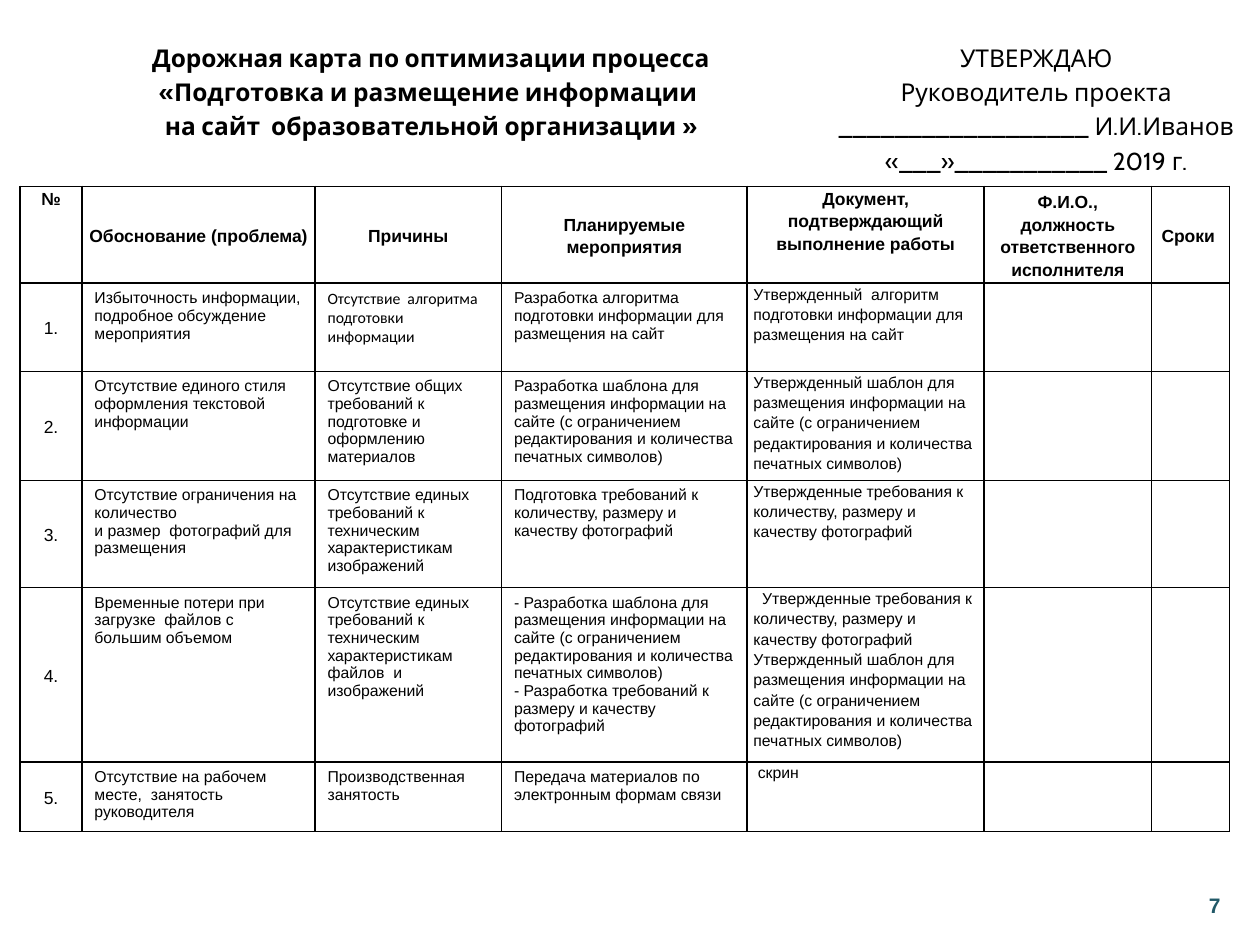
"""Build the road map slide with its approval block and task table."""
from dataclasses import dataclass

from lxml.etree import SubElement
from pptx import Presentation
from pptx.dml.color import RGBColor
from pptx.enum.text import MSO_ANCHOR, PP_ALIGN
from pptx.oxml.ns import qn
from pptx.util import Inches, Pt


@dataclass(frozen=True)
class Theme:
    """Colours, fonts and type sizes."""
    ink: str = "000000"
    page: str = "215968"
    title: str = "Cabin"
    body: str = "Arial"
    alt: str = "Calibri"
    large: int = 14
    mid: int = 12
    head: int = 10
    small: int = 9
    line: int = 1
    plain: str = "{2D5ABB26-0587-4C30-8999-92F81FD0307C}"


THEME = Theme()

TITLE = ["Дорожная карта по оптимизации процесса",
         "«Подготовка и размещение информации \nна сайт  образовательной организации »"]
SIGN = ["УТВЕРЖДАЮ", "Руководитель проекта",
        "__________________ И.И.Иванов", "«___»___________ 2019 г."]
HEADS = ["№", "Обоснование (проблема)", "Причины", "Планируемые мероприятия",
         "Документ, подтверждающий выполнение работы",
         "Ф.И.О., должность ответственного исполнителя", "Сроки "]
LIMIT = ("для размещения информации на сайте (с ограничением "
         "редактирования и количества печатных символов)")
PHOTO = "количеству, размеру и качеству фотографий"
TECH = "Отсутствие единых требований к техническим характеристикам "
TASKS = [
    ("Избыточность информации, подробное обсуждение мероприятия",
     "Отсутствие  алгоритма подготовки информации",
     ["Разработка алгоритма подготовки информации для размещения на сайт"],
     ["Утвержденный  алгоритм подготовки информации для размещения на сайт"]),
    ("Отсутствие единого стиля оформления текстовой информации",
     "Отсутствие общих требований к подготовке и оформлению материалов",
     ["Разработка шаблона " + LIMIT], ["Утвержденный шаблон " + LIMIT]),
    ("Отсутствие ограничения на  количество \nи размер  фотографий для размещения",
     TECH + "изображений",
     ["Подготовка требований к " + PHOTO], ["Утвержденные требования к " + PHOTO]),
    ("Временные потери при загрузке  файлов с большим объемом",
     TECH + "файлов  и изображений",
     ["- Разработка шаблона " + LIMIT,
      "- Разработка требований к размеру и качеству фотографий"],
     ["  Утвержденные требования к " + PHOTO, "Утвержденный шаблон " + LIMIT]),
    ("Отсутствие на рабочем месте,  занятость руководителя",
     "Производственная занятость",
     ["Передача материалов по электронным формам связи"], [" скрин"]),
]
COLS = [0.49, 1.85, 1.48, 1.95, 1.88, 1.33, 0.62]
ROWS = [0.71, 0.7, 0.8, 0.8, 1.29, 0.52]


def write(frame, lines, size=THEME.small, font=THEME.body, color=THEME.ink,
          bold=False, align=PP_ALIGN.LEFT, space=None):
    """Fill a text frame with formatted paragraphs."""
    for i, line in enumerate(lines):
        para = frame.add_paragraph() if i else frame.paragraphs[0]
        para.text = line
        para.alignment = align
        if space:
            para.line_spacing = space
        for run in para.runs:
            run.font.size, run.font.name, run.font.bold = Pt(size), font, bold
            run.font.color.rgb = RGBColor.from_string(color)
        for gap in para._p.findall(qn("a:br")):
            SubElement(gap, qn("a:rPr"), sz=str(size * 100))


def pad(cell, side):
    """Give a cell narrow side margins and none above or below."""
    cell.margin_left = cell.margin_right = Inches(side)
    cell.margin_top = cell.margin_bottom = 0


def edge(cell):
    """Draw a solid border on all four sides of a cell."""
    props = cell._tc.get_or_add_tcPr()
    for i, side in enumerate(("lnL", "lnR", "lnT", "lnB")):
        line = props.makeelement(qn("a:" + side), w=str(Pt(THEME.line)))
        fill = SubElement(line, qn("a:solidFill"))
        SubElement(fill, qn("a:srgbClr"), val=THEME.ink)
        props.insert(i, line)


def grid(slide, left, top, cols, rows):
    """Add an unstyled table with the given column and row sizes."""
    frame = slide.shapes.add_table(len(rows), len(cols), Inches(left), Inches(top),
                                   Inches(sum(cols)), Inches(sum(rows)))
    table = frame.table
    table.first_row = table.horz_banding = False
    table._tbl.tblPr.find(qn("a:tableStyleId")).text = THEME.plain
    for col, width in zip(table.columns, cols):
        col.width = Inches(width)
    for row, height in zip(table.rows, rows):
        row.height = Inches(height)
    for cell in table.iter_cells():
        cell.fill.background()
    return table


def top(slide):
    """Add the title and the approval block."""
    table = grid(slide, 0.39, 0.31, [6.06, 3.55], [1.07])
    for cell, lines, bold in zip(table.iter_cells(), (TITLE, SIGN), (True, False)):
        pad(cell, 0.04)
        write(cell.text_frame, lines, size=THEME.large, font=THEME.title,
              bold=bold, align=PP_ALIGN.CENTER, space=1.15)


def plan(slide):
    """Add the table of problems, causes and tasks."""
    table = grid(slide, 0.16, 1.48, COLS, ROWS)
    for cell in table.iter_cells():
        edge(cell)
    for i, head in enumerate(HEADS):
        cell = table.cell(0, i)
        pad(cell, 0.05)
        if i not in (0, 4):
            cell.vertical_anchor = MSO_ANCHOR.MIDDLE
        write(cell.text_frame, [head], size=THEME.head, bold=True,
              align=PP_ALIGN.CENTER, space=1.15)
    for i, (need, cause, steps, proof) in enumerate(TASKS, 1):
        num, *mid, last = [table.cell(i, j) for j in range(5)]
        pad(num, 0.05)
        num.vertical_anchor = MSO_ANCHOR.MIDDLE
        write(num.text_frame, [f"{i}."], size=THEME.head,
              align=PP_ALIGN.CENTER, space=1.15)
        fonts = (THEME.body, THEME.alt if i == 1 else THEME.body, THEME.body)
        for cell, lines, font in zip(mid, ([need], [cause], steps), fonts):
            write(cell.text_frame, lines, font=font)
        pad(last, 0.05)
        write(last.text_frame, proof, space=1.15)


def page(slide):
    """Add the page number."""
    box = slide.shapes.add_textbox(Inches(9.45), Inches(7.03), Inches(0.38), Inches(0.31))
    frame = box.text_frame
    frame.word_wrap = True
    frame.vertical_anchor = MSO_ANCHOR.MIDDLE
    write(frame, ["7"], size=THEME.mid, color=THEME.page, bold=True,
          align=PP_ALIGN.CENTER)


def main():
    """Build and save the slide."""
    deck = Presentation()
    deck.slide_width, deck.slide_height = Inches(10), Inches(7.5)
    slide = deck.slides.add_slide(deck.slide_layouts[6])
    page(slide)
    top(slide)
    plan(slide)
    deck.save("out.pptx")


if __name__ == "__main__":
    main()
